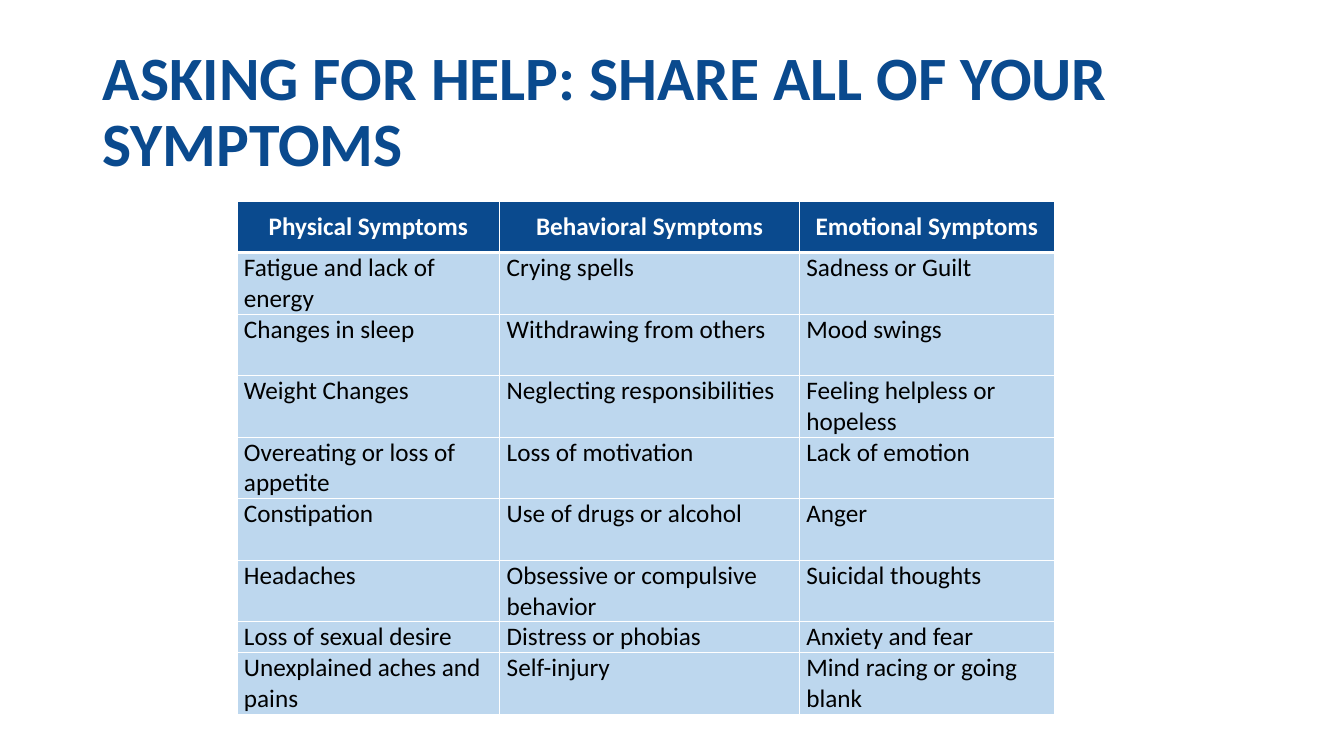
from lxml import etree
from pptx import Presentation
from pptx.dml.color import RGBColor
from pptx.enum.text import MSO_ANCHOR, MSO_AUTO_SIZE, PP_ALIGN
from pptx.oxml.ns import qn
from pptx.util import Inches, Pt

MIDDLE, TOP = MSO_ANCHOR.MIDDLE, MSO_ANCHOR.TOP
LEFT, CENTER = PP_ALIGN.LEFT, PP_ALIGN.CENTER
NO_FIT = MSO_AUTO_SIZE.NONE
TITLE_ONLY = 5

TITLE = "ASKING FOR HELP: SHARE ALL OF YOUR SYMPTOMS"
SYMPTOMS = [
    ("Physical Symptoms", "Behavioral Symptoms", "Emotional Symptoms"),
    ("Fatigue and lack of energy", "Crying spells", "Sadness or Guilt"),
    ("Changes in sleep", "Withdrawing from others", "Mood swings"),
    ("Weight Changes", "Neglecting responsibilities", "Feeling helpless or hopeless"),
    ("Overeating or loss of appetite", "Loss of motivation", "Lack of emotion"),
    ("Constipation", "Use of drugs or alcohol", "Anger"),
    ("Headaches", "Obsessive or compulsive behavior", "Suicidal thoughts"),
    ("Loss of sexual desire", "Distress or phobias", "Anxiety and fear"),
    ("Unexplained aches and pains", "Self-injury", "Mind racing or going blank"),
]
# Percent of the slide's width and height
COL_WIDTHS = [19.55, 22.3, 18.98]
HEADER, ONE_LINE, TWO_LINES = 6.7, 4.07, 8.14
ROW_HEIGHTS = [HEADER] + [TWO_LINES] * 6 + [ONE_LINE, TWO_LINES]


def color(value):
    return RGBColor.from_string(value)


class Deck:
    """Holds the style and the current slide; lengths are percent of the slide."""

    font, navy, pale, white, black = "Calibri", "0A4A8E", "BDD7EE", "FFFFFF", "000000"

    def __init__(self, prs):
        self.prs = prs
        self.s = prs.slides.add_slide(prs.slide_layouts[TITLE_ONLY])

    def x(self, percent):
        return round(self.prs.slide_width * percent / 100)

    def y(self, percent):
        return round(self.prs.slide_height * percent / 100)

    def style(self, p, size, ink, bold, align):
        p.alignment = align
        for r in p.runs:
            r.font.name, r.font.size, r.font.bold = self.font, Pt(size), bold
            r.font.color.rgb = color(ink)

    def title(self, text, left, top, width, height):
        sp = self.s.shapes.title
        sp.left, sp.top = self.x(left), self.y(top)
        sp.width, sp.height = self.x(width), self.y(height)
        tf = sp.text_frame
        tf.text = text
        tf.auto_size, tf.word_wrap, tf.vertical_anchor = NO_FIT, True, MIDDLE
        p = tf.paragraphs[0]
        p.line_spacing = 0.9
        self.style(p, 44, self.navy, True, LEFT)

    def table(self, rows, left, top, widths, heights):
        """Add a table whose first row is the header."""
        table = self.s.shapes.add_table(
            len(rows), len(widths), self.x(left), self.y(top),
            self.x(sum(widths)), self.y(sum(heights))).table
        for column, width in zip(table.columns, widths):
            column.width = self.x(width)
        for i, (row, height) in enumerate(zip(rows, heights)):
            table.rows[i].height = self.y(height)
            for j, text in enumerate(row):
                self.cell(table.cell(i, j), text, i)

    def cell(self, cell, text, row):
        header = row == 0
        cell.margin_left = cell.margin_right = Inches(0.07)
        cell.margin_top = cell.margin_bottom = Inches(0.1 if header else 0)
        cell.vertical_anchor = MIDDLE if header else TOP
        self.borders(cell, top=3 if row == 1 else 1, bottom=3 if header else 1)
        cell.fill.solid()
        cell.fill.fore_color.rgb = color(self.navy if header else self.pale)
        cell.text_frame.text = text
        self.style(cell.text_frame.paragraphs[0], 18,
                   self.white if header else self.black, header,
                   CENTER if header else LEFT)

    def borders(self, cell, top, bottom):
        """Draw the cell's four edges, widths in points; call before filling."""
        tcPr = cell._tc.get_or_add_tcPr()
        for side, width in (("L", 1), ("R", 1), ("T", top), ("B", bottom)):
            ln = etree.SubElement(tcPr, qn(f"a:ln{side}"), w=str(Pt(width)))
            fill = etree.SubElement(ln, qn("a:solidFill"))
            etree.SubElement(fill, qn("a:srgbClr"), val=self.white)


def main():
    prs = Presentation()
    prs.slide_width, prs.slide_height = Inches(13.33), Inches(7.5)
    deck = Deck(prs)
    deck.title(TITLE, 6.9, 5.33, 86.25, 19.33)
    deck.table(SYMPTOMS, 17.63, 26.67, COL_WIDTHS, ROW_HEIGHTS)
    prs.save("out.pptx")


if __name__ == "__main__":
    main()
